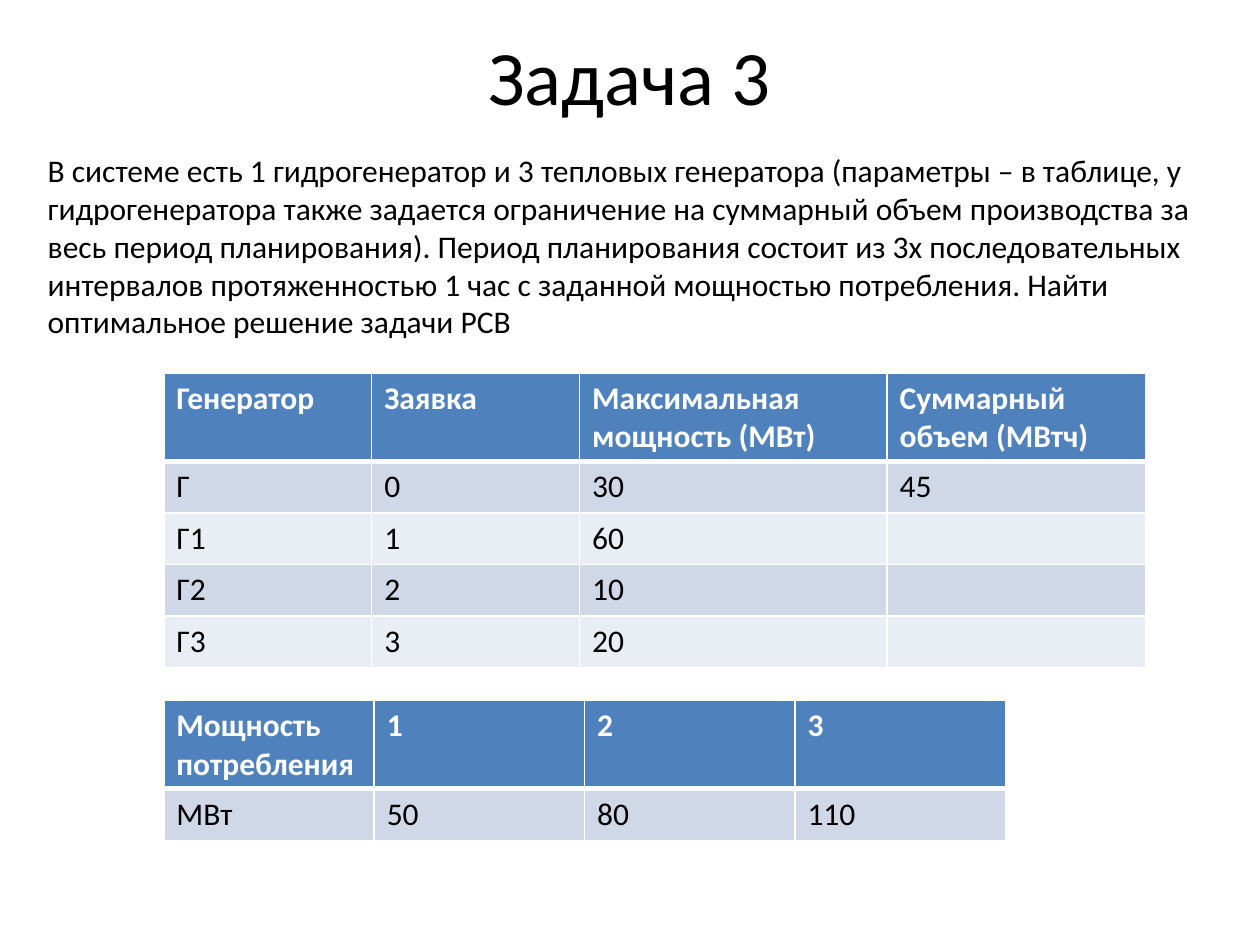
from dataclasses import dataclass

from lxml.etree import SubElement
from pptx import Presentation
from pptx.dml.color import RGBColor as Rgb
from pptx.enum.text import MSO_ANCHOR as Anchor, PP_ALIGN as Align
from pptx.oxml.ns import qn
from pptx.slide import Slide
from pptx.table import _Cell as Cell
from pptx.text.text import TextFrame
from pptx.util import Inches, Pt


@dataclass(frozen=True)
class Theme:
    font: str = "Calibri"
    title_size: int = 44
    body_size: int = 18
    ink: str = "000000"
    paper: str = "FFFFFF"
    header: str = "4F81BD"
    bands: tuple[str, str] = ("D0D8E8", "E9EDF4")
    thin: int = 1
    thick: int = 3


@dataclass(frozen=True)
class TextBlock:
    text: str
    left: float
    top: float
    width: float
    height: float
    size: int
    align: Align = Align.LEFT
    anchor: Anchor = Anchor.TOP


@dataclass(frozen=True)
class DataTable:
    left: float
    top: float
    columns: tuple[float, ...]
    rows: tuple[tuple[str, ...], ...]
    header_height: float = 0.7
    row_height: float = 0.41


THEME = Theme()

TITLE = TextBlock("Задача 3", 0.5, -0.03, 9, 1.25, THEME.title_size,
                  Align.CENTER, Anchor.MIDDLE)
STATEMENT = TextBlock(
    "В системе есть 1 гидрогенератор и 3 тепловых генератора (параметры – в таблице, "
    "у гидрогенератора также задается ограничение на суммарный объем производства за "
    "весь период планирования). Период планирования состоит из 3х последовательных "
    "интервалов протяженностью 1 час с заданной мощностью потребления. Найти "
    "оптимальное решение задачи РСВ",
    0.28, 1.15, 9.45, 1.62, THEME.body_size)

GENERATORS = DataTable(1.3, 2.96, (1.65, 1.65, 2.44, 2.05), (
    ("Генератор", "Заявка", "Максимальная мощность (МВт)", "Суммарный объем (МВтч)"),
    ("Г", "0", "30", "45"),
    ("Г1", "1", "60", ""),
    ("Г2", "2", "10", ""),
    ("Г3", "3", "20", ""),
))
DEMAND = DataTable(1.3, 5.56, (1.67,) * 4, (
    ("Мощность потребления", "1", "2", "3"),
    ("МВт", "50", "80", "110"),
))


def write(frame: TextFrame, text: str, size: int, color: str,
          bold: bool = False, align: Align = Align.LEFT) -> None:
    frame.text = text
    for paragraph in frame.paragraphs:
        paragraph.alignment = align
        for run in paragraph.runs:
            run.font.name = THEME.font
            run.font.size = Pt(size)
            run.font.bold = bold
            run.font.color.rgb = Rgb.from_string(color)


def add_text(slide: Slide, block: TextBlock) -> None:
    box = slide.shapes.add_textbox(Inches(block.left), Inches(block.top),
                                   Inches(block.width), Inches(block.height))
    box.text_frame.word_wrap = True
    box.text_frame.vertical_anchor = block.anchor
    write(box.text_frame, block.text, block.size, THEME.ink, align=block.align)


def add_borders(cell: Cell, top: int, bottom: int) -> None:
    properties = cell._tc.get_or_add_tcPr()
    widths = {"lnL": THEME.thin, "lnR": THEME.thin, "lnT": top, "lnB": bottom}
    for side, width in widths.items():
        line = SubElement(properties, qn(f"a:{side}"), w=str(Pt(width)))
        SubElement(SubElement(line, qn("a:solidFill")), qn("a:srgbClr"), val=THEME.paper)


def add_data_table(slide: Slide, data: DataTable) -> None:
    heights = [data.header_height] + [data.row_height] * (len(data.rows) - 1)
    table = slide.shapes.add_table(
        len(data.rows), len(data.columns), Inches(data.left), Inches(data.top),
        Inches(sum(data.columns)), Inches(sum(heights))).table
    for column, width in zip(table.columns, data.columns):
        column.width = Inches(width)
    for index, (row, height, values) in enumerate(zip(table.rows, heights, data.rows)):
        row.height = Inches(height)
        is_header = index == 0
        fill = THEME.header if is_header else THEME.bands[(index - 1) % 2]
        top = THEME.thick if index == 1 else THEME.thin
        bottom = THEME.thick if is_header else THEME.thin
        for cell, value in zip(row.cells, values):
            add_borders(cell, top, bottom)
            cell.fill.solid()
            cell.fill.fore_color.rgb = Rgb.from_string(fill)
            write(cell.text_frame, value, THEME.body_size,
                  THEME.paper if is_header else THEME.ink, bold=is_header)


def main() -> None:
    deck = Presentation()
    deck.slide_width, deck.slide_height = Inches(10), Inches(7.5)
    slide = deck.slides.add_slide(deck.slide_layouts[6])
    add_text(slide, TITLE)
    for data in (GENERATORS, DEMAND):
        add_data_table(slide, data)
    add_text(slide, STATEMENT)
    deck.save("out.pptx")


if __name__ == "__main__":
    main()
